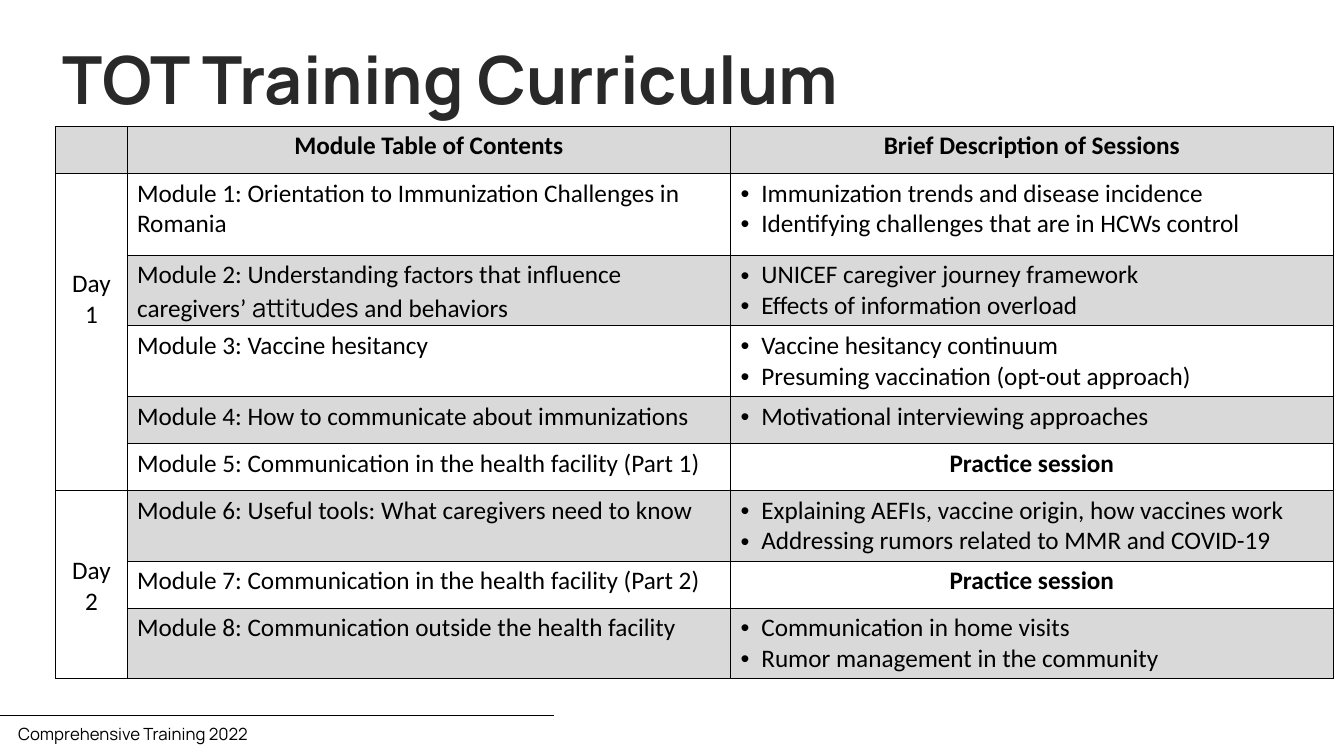
from lxml import etree
from pptx import Presentation
from pptx.dml.color import RGBColor
from pptx.enum.shapes import MSO_CONNECTOR
from pptx.enum.text import MSO_ANCHOR, PP_ALIGN
from pptx.oxml.ns import qn
from pptx.util import Inches, Pt

BLACK = RGBColor(0x00, 0x00, 0x00)
CHARCOAL = RGBColor(0x29, 0x29, 0x29)
GRAY = RGBColor(0xD9, 0xD9, 0xD9)
WHITE = RGBColor(0xFF, 0xFF, 0xFF)
CENTER, LEFT = PP_ALIGN.CENTER, PP_ALIGN.LEFT
MIDDLE, TOP = MSO_ANCHOR.MIDDLE, MSO_ANCHOR.TOP
BODY_FONT, DISPLAY_FONT = "Calibri", "Manrope"
BODY_LINE = 0.45  # height of one table text line, inches

HEADINGS = ["", "Module Table of Contents", "Brief Description of Sessions"]
PRACTICE = ["Practice session"]
# Module title ("|" sets off a word in the display font), sessions, row height
MODULES = [
    ("Module 1: Orientation to Immunization Challenges in Romania",
     ["Immunization trends and disease incidence",
      "Identifying challenges that are in HCWs control"], 1.22),
    ("Module 2: Understanding factors that influence caregivers’ |attitudes| and behaviors",
     ["UNICEF caregiver journey framework", "Effects of information overload"], 1.05),
    ("Module 3: Vaccine hesitancy",
     ["Vaccine hesitancy continuum", "Presuming vaccination (opt-out approach)"], 1.05),
    ("Module 4: How to communicate about immunizations",
     ["Motivational interviewing approaches"], 0.7),
    ("Module 5: Communication in the health facility (Part 1)", PRACTICE, 0.7),
    ("Module 6: Useful tools: What caregivers need to know",
     ["Explaining AEFIs, vaccine origin, how vaccines work",
      "Addressing rumors related to MMR and COVID-19"], 1.05),
    ("Module 7: Communication in the health facility (Part 2)", PRACTICE, 0.7),
    ("Module 8: Communication outside the health facility",
     ["Communication in home visits", "Rumor management in the community"], 1.05),
]
# Label, first row, last row, text lines to drop the label by
DAYS = [("Day 1", 1, 5, 3), ("Day 2", 6, 8, 2)]
COLUMN_WIDTHS = [1.06, 8.98, 8.97]
HEADER_HEIGHT = 0.7


def write(paragraph, text, size, font_name=BODY_FONT, color=BLACK, bold=False, align=LEFT):
    paragraph.alignment = align
    for part in text.split("|"):
        run = paragraph.add_run()
        run.text = part
        name = DISPLAY_FONT if part == "attitudes" else font_name
        for key, value in {"name": name, "size": Pt(size), "bold": bold}.items():
            setattr(run.font, key, value)
        run.font.color.rgb = color


def add_bullet(paragraph):
    properties = paragraph._p.get_or_add_pPr()
    properties.set("marL", str(Inches(0.31)))
    properties.set("indent", str(Inches(-0.31)))
    etree.SubElement(properties, qn("a:buFont")).set("typeface", "Arial")
    etree.SubElement(properties, qn("a:buChar")).set("char", "•")


prs = Presentation()
prs.slide_width, prs.slide_height = Inches(20), Inches(11.25)
slide = prs.slides.add_slide(prs.slide_layouts[6])
slide.background.fill.solid()
slide.background.fill.fore_color.rgb = WHITE

# Footer rule
footer_rule = slide.shapes.add_connector(
    MSO_CONNECTOR.STRAIGHT, Inches(-0.08), Inches(10.65), Inches(8.25), Inches(10.65))
footer_rule.line.color.rgb = BLACK
footer_rule.line.width = Pt(0.5)
etree.SubElement(footer_rule._element.spPr, qn("a:effectLst"))

# Footer and title
for text, box, size, color, bold, anchor, spacing in [
    ("Comprehensive Training 2022", (0.17, 10.72, 6.58, 0.4), 18, BLACK, False, TOP, 1.0),
    ("TOT Training Curriculum", (0.83, 0.6, 17.25, 1.28), 71, CHARCOAL, True, MIDDLE, 0.9),
]:
    frame = slide.shapes.add_textbox(*[Inches(v) for v in box]).text_frame
    frame.word_wrap = True
    frame.vertical_anchor = anchor
    frame.paragraphs[0].line_spacing = spacing
    write(frame.paragraphs[0], text, size, DISPLAY_FONT, color, bold)

# Curriculum table
row_heights = [HEADER_HEIGHT] + [height for _, _, height in MODULES]
curriculum = slide.shapes.add_table(
    len(row_heights), len(COLUMN_WIDTHS), Inches(0.83), Inches(1.88),
    Inches(sum(COLUMN_WIDTHS)), Inches(sum(row_heights))).table
for column, width in zip(curriculum.columns, COLUMN_WIDTHS):
    column.width = Inches(width)
for row, height in zip(curriculum.rows, row_heights):
    row.height = Inches(height)

# Cell margins, borders and banding
margins = {"margin_left": 0.15, "margin_right": 0.15, "margin_top": 0.07, "margin_bottom": 0.07}
for r in range(len(row_heights)):
    for c in range(len(COLUMN_WIDTHS)):
        cell = curriculum.cell(r, c)
        for key, value in margins.items():
            setattr(cell, key, Inches(value))
        cell_properties = cell._tc.get_or_add_tcPr()
        for side in ("a:lnL", "a:lnR", "a:lnT", "a:lnB"):
            border = etree.SubElement(cell_properties, qn(side), w=str(Pt(1)))
            border_fill = etree.SubElement(border, qn("a:solidFill"))
            etree.SubElement(border_fill, qn("a:srgbClr"), val=str(BLACK))
        shaded = r == 0 or (c > 0 and r % 2 == 0 and r < 6) or (c > 0 and r in (6, 8))
        cell.fill.solid()
        cell.fill.fore_color.rgb = GRAY if shaded else WHITE

# Headings
for c, heading in enumerate(HEADINGS):
    if heading:
        write(curriculum.cell(0, c).text_frame.paragraphs[0], heading, 27,
              bold=True, align=CENTER)

# Modules and their sessions
for r, (module, sessions, _) in enumerate(MODULES, start=1):
    write(curriculum.cell(r, 1).text_frame.paragraphs[0], module, 27)
    frame = curriculum.cell(r, 2).text_frame
    is_practice = sessions is PRACTICE
    for i, session in enumerate(sessions):
        paragraph = frame.paragraphs[0] if i == 0 else frame.add_paragraph()
        if not is_practice:
            add_bullet(paragraph)
        write(paragraph, session, 27, bold=is_practice,
              align=CENTER if is_practice else LEFT)

# Day labels
for label, first, last, lines_down in DAYS:
    day = curriculum.cell(first, 0)
    day.merge(curriculum.cell(last, 0))
    day.margin_top = Inches(0.07 + BODY_LINE * lines_down)
    write(day.text_frame.paragraphs[0], label, 27, align=CENTER)

prs.save("out.pptx")
